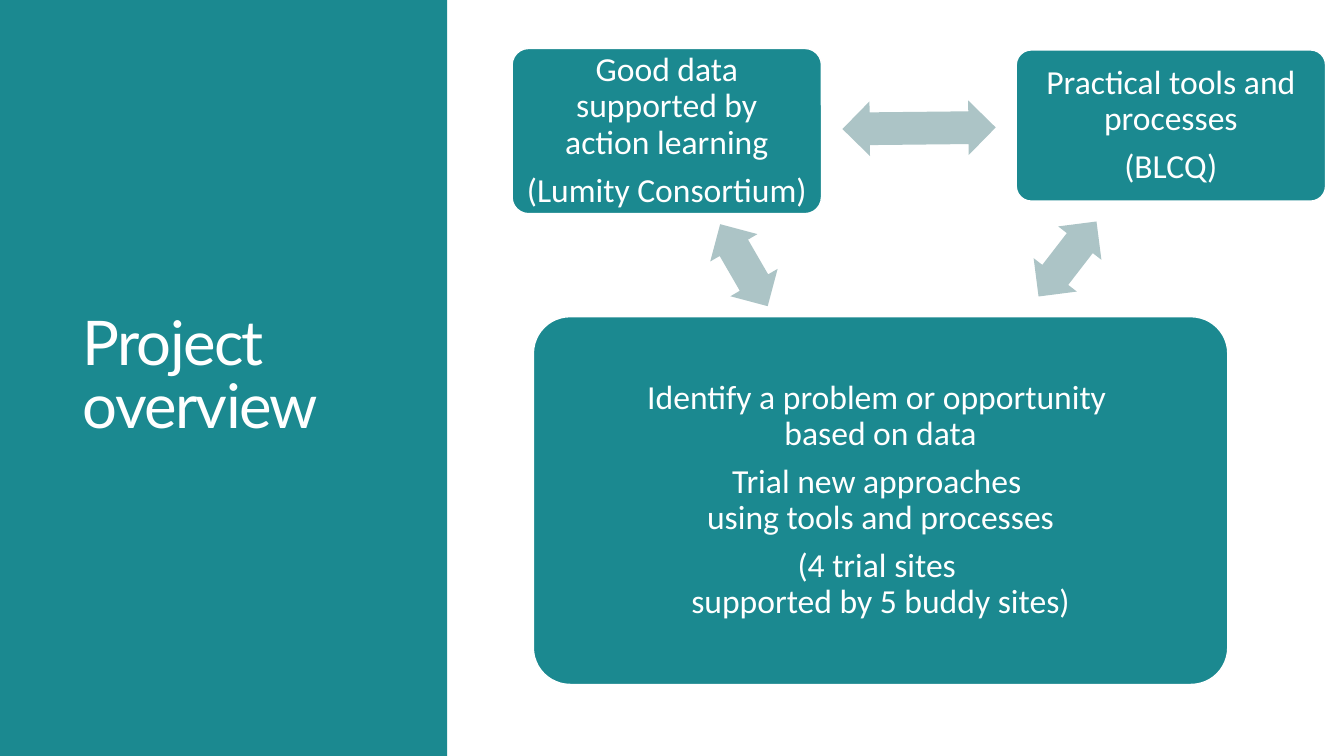
from pptx import Presentation
from pptx.dml.color import RGBColor
from pptx.enum.shapes import MSO_SHAPE
from pptx.enum.text import MSO_ANCHOR, PP_ALIGN
from pptx.util import Pt

RECT = MSO_SHAPE.RECTANGLE
ROUNDED = MSO_SHAPE.ROUNDED_RECTANGLE
DOUBLE_ARROW = MSO_SHAPE.LEFT_RIGHT_ARROW
MIDDLE = MSO_ANCHOR.MIDDLE
CENTER = PP_ALIGN.CENTER

COLORS = {"teal": "1B8990", "arrow": "ACC4C6", "white": "FFFFFF"}
SLIDE_W, SLIDE_H = 960, 540
PANEL_W = 319.5
BOX_INSET = 7.2
ARROW_H = 39

TITLE = "Project overview"
# (left, top, width, height), paragraphs; \v is a line break
BOXES = [
    ((365.8, 34.6, 221, 118),
     ["Good data supported by\vaction learning", "(Lumity Consortium)"]),
    ((725.9, 35.7, 221, 108),
     ["Practical tools and processes", "(BLCQ)"]),
    ((381, 226.2, 496, 262.7),
     ["Identify a problem or opportunity \vbased on data",
      "Trial new approaches \vusing tools and processes",
      "(4 trial sites \vsupported by 5 buddy sites)"]),
]
# centre x, centre y, length, rotation
ARROWS = [
    (656.5, 91.6, 109.5, 359.4),
    (762.5, 185, 67.7, 127.7),
    (531.4, 189.4, 67.7, 239.9),
]


def rgb(name):
    return RGBColor.from_string(COLORS[name])


def add_filled(slide, kind, box, fill):
    s = slide.shapes.add_shape(kind, *(Pt(v) for v in box))
    s.shadow.inherit = False
    s.fill.solid()
    s.fill.fore_color.rgb = rgb(fill)
    s.line.fill.background()
    return s


def style_run(r, font, size):
    r.font.name = font
    r.font.size = Pt(size)
    r.font.color.rgb = rgb("white")


def add_title(slide):
    s = slide.shapes.add_textbox(Pt(52), Pt(73.8), Pt(235.5), Pt(392.5))
    tf = s.text_frame
    tf.word_wrap = True
    tf.vertical_anchor = MIDDLE
    p = tf.paragraphs[0]
    p.text = TITLE
    p.line_spacing = 0.85
    r = p.runs[0]
    style_run(r, "Lato", 44)
    r.font._element.set("spc", "-120")


def add_box(slide, box, lines):
    s = add_filled(slide, ROUNDED, box, "teal")
    s.adjustments[0] = 0.1
    s.line.color.rgb = rgb("white")
    s.line.width = Pt(1)
    tf = s.text_frame
    tf.word_wrap = True
    tf.vertical_anchor = MIDDLE
    tf.margin_left = tf.margin_right = Pt(BOX_INSET)
    tf.margin_top = tf.margin_bottom = Pt(BOX_INSET)
    for i, line in enumerate(lines):
        p = tf.add_paragraph() if i else tf.paragraphs[0]
        p.text = line
        p.alignment = CENTER
        p.line_spacing = 0.9
        p.space_after = Pt(8.4)
        for r in p.runs:
            style_run(r, "Calibri", 24)


def add_arrow(slide, cx, cy, length, rotation):
    box = (cx - length / 2, cy - ARROW_H / 2, length, ARROW_H)
    s = add_filled(slide, DOUBLE_ARROW, box, "arrow")
    s.adjustments[0] = 0.6
    s.adjustments[1] = 0.5
    s.rotation = rotation


def main():
    prs = Presentation()
    prs.slide_width, prs.slide_height = Pt(SLIDE_W), Pt(SLIDE_H)
    slide = prs.slides.add_slide(prs.slide_layouts[6])
    add_filled(slide, RECT, (0, 0, PANEL_W, SLIDE_H), "teal")
    add_title(slide)
    for box, lines in BOXES:
        add_box(slide, box, lines)
    for arrow in ARROWS:
        add_arrow(slide, *arrow)
    prs.save("out.pptx")


if __name__ == "__main__":
    main()
